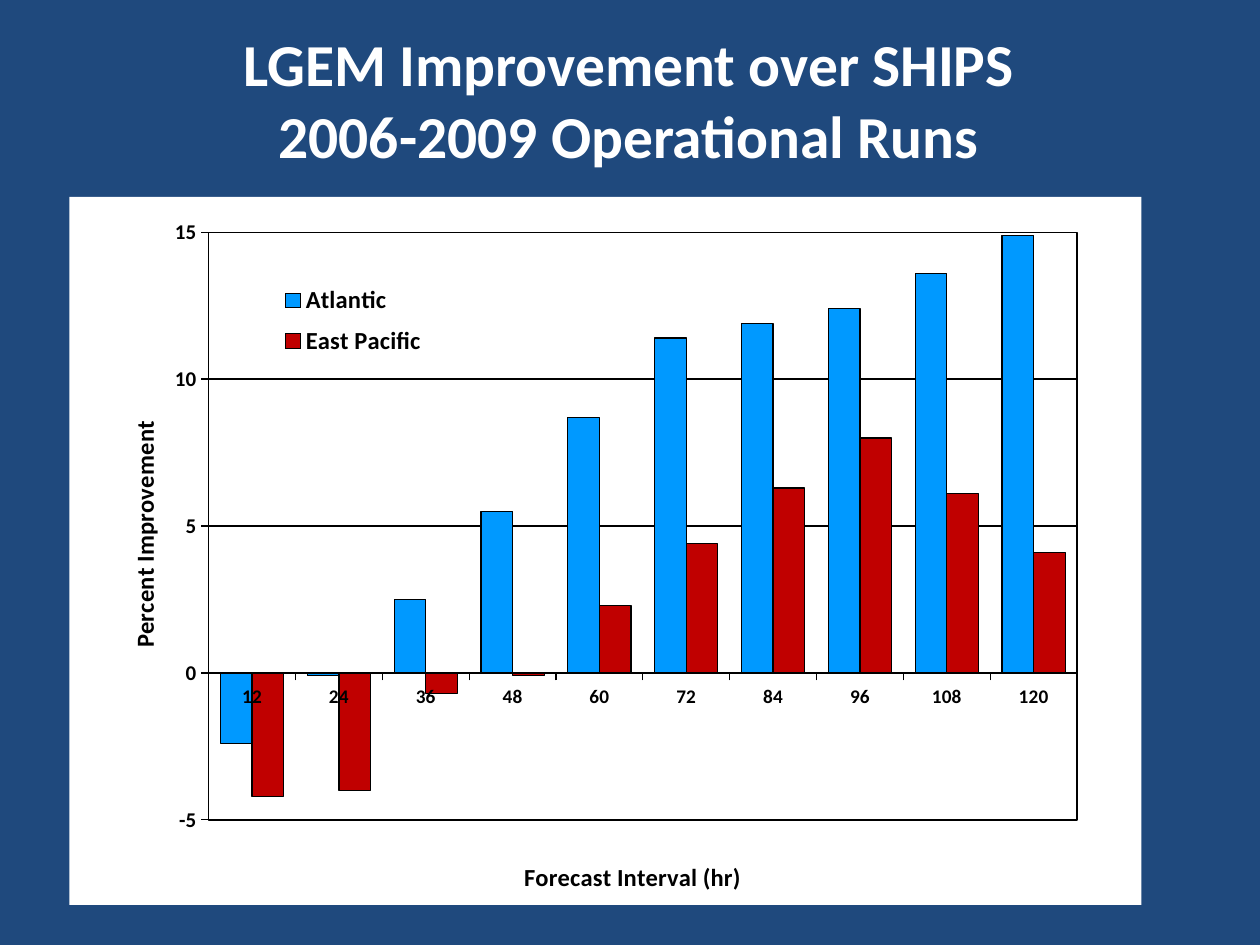
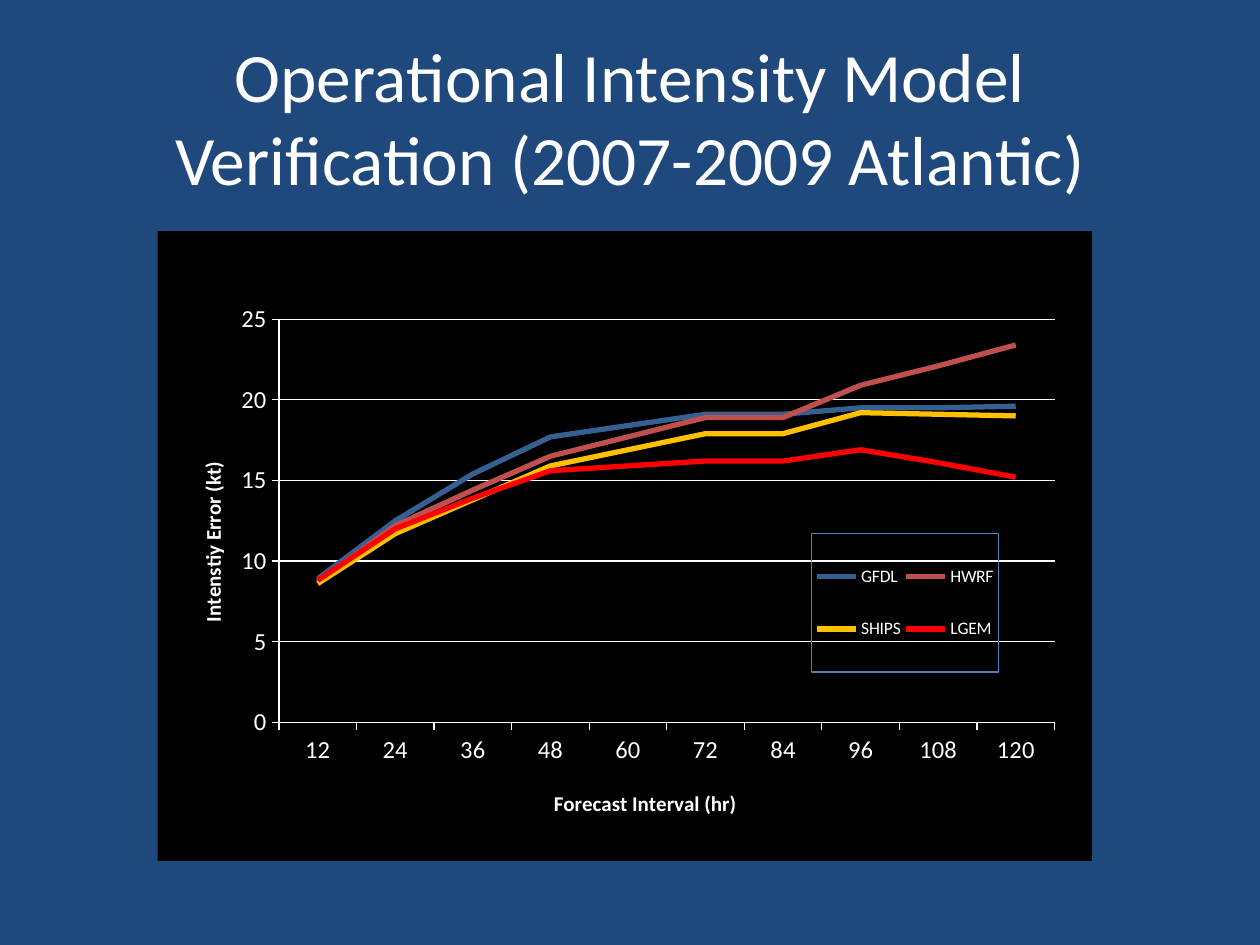
from lxml import etree
from pptx import Presentation
from pptx.chart.data import CategoryChartData
from pptx.dml.color import RGBColor
from pptx.enum.chart import XL_CHART_TYPE, XL_LEGEND_POSITION, XL_TICK_MARK
from pptx.enum.text import MSO_ANCHOR, MSO_AUTO_SIZE, PP_ALIGN
from pptx.oxml import parse_xml
from pptx.oxml.ns import qn
from pptx.util import Pt

BARS = XL_CHART_TYPE.COLUMN_CLUSTERED
LINES = XL_CHART_TYPE.LINE
RIGHT = XL_LEGEND_POSITION.RIGHT
OUT = XL_TICK_MARK.OUTSIDE
NONE = XL_TICK_MARK.NONE
MIDDLE = MSO_ANCHOR.MIDDLE
FIXED = MSO_AUTO_SIZE.NONE
CENTER = PP_ALIGN.CENTER

FONT = "Calibri"
HUES = {
    "navy": "1F497D", "white": "FFFFFF", "black": "000000",
    "sky": "0099FF", "brick": "C00000", "steel": "376092",
    "rose": "C0504D", "gold": "FFC000", "red": "FF0000", "edge": "4F81BD",
}
HOURS = [str(hour) for hour in range(12, 121, 12)]
DRAW = "http://schemas.openxmlformats.org/drawingml/2006/main"
CHART = "http://schemas.openxmlformats.org/drawingml/2006/chart"


class Deck:
    """Holds the shared style and the current slide."""

    def __init__(self):
        self.prs = Presentation()
        self.prs.slide_width, self.prs.slide_height = Pt(720), Pt(540)
        self.tint(self.prs.slide_master.background.fill, "navy")
        self.slide = None

    def tint(self, fill, hue):
        fill.solid()
        fill.fore_color.rgb = RGBColor.from_string(HUES[hue])

    def style(self, font, hue, size, bold=False):
        for key, value in {"name": FONT, "size": Pt(size), "bold": bold}.items():
            setattr(font, key, value)
        font.color.rgb = RGBColor.from_string(HUES[hue])

    def stroke(self, line, hue, width=0.75):
        self.tint(line.fill, hue)
        line.width = Pt(width)

    def title(self, lines, box, size, bold=False):
        self.slide = self.prs.slides.add_slide(self.prs.slide_layouts[5])
        shape = self.slide.shapes.title
        for key, value in zip(("left", "top", "width", "height"), box):
            setattr(shape, key, Pt(value))
        frame = shape.text_frame
        form = {"word_wrap": True, "auto_size": FIXED, "vertical_anchor": MIDDLE}
        for key, value in form.items():
            setattr(frame, key, value)
        para = frame.paragraphs[0]
        para.alignment = CENTER
        for row, text in enumerate(lines):
            if row:
                para.add_line_break()
            run = para.add_run()
            run.text = text
            self.style(run.font, "white", size, bold)

    def place(self, node, index, spot, inner=False):
        for old in node.findall(qn("c:layout")):
            node.remove(old)
        layout = parse_xml(f'<c:layout xmlns:c="{CHART}"><c:manualLayout/></c:layout>')
        marks = [("layoutTarget", "inner")] if inner else []
        marks += [("xMode", "edge"), ("yMode", "edge"), *zip("xywh", spot)]
        for tag, value in marks:
            etree.SubElement(layout[0], qn(f"c:{tag}")).set("val", str(value))
        node.insert(index, layout)

    def skin(self, prior, fill=None, edge=None):
        def solid(hue):
            if not hue:
                return "<a:noFill/>"
            return f'<a:solidFill><a:srgbClr val="{HUES[hue]}"/></a:solidFill>'

        prior.addnext(parse_xml(
            f'<c:spPr xmlns:c="{CHART}" xmlns:a="{DRAW}">{solid(fill)}'
            f'<a:ln w="{Pt(0.75)}">{solid(edge)}</a:ln></c:spPr>'))

    def axis(self, axis, text, spot, ink, size, head, bold):
        form = {"major_tick_mark": OUT, "minor_tick_mark": NONE}
        for key, value in form.items():
            setattr(axis, key, value)
        self.style(axis.tick_labels.font, ink, size, bold)
        self.stroke(axis.format.line, ink)
        name = axis.axis_title
        run = name.text_frame.paragraphs[0].add_run()
        run.text = text
        self.style(run.font, ink, head, True)
        self.place(name._element, 1, spot)

    def scale(self, axis, low, high, ink):
        form = {"minimum_scale": low, "maximum_scale": high, "major_unit": 5,
                "has_major_gridlines": True}
        for key, value in form.items():
            setattr(axis, key, value)
        self.stroke(axis.major_gridlines.format.line, ink)
        axis.tick_labels.number_format = "0"
        axis.tick_labels.number_format_is_linked = False

    def legend(self, chart, spot, ink, size, bold, edge):
        chart.has_legend = True
        legend = chart.legend
        legend.position = RIGHT
        legend.include_in_layout = False
        self.style(legend.font, ink, size, bold)
        node = legend._element
        self.place(node, 1, spot)
        self.skin(node.find(qn("c:overlay")), edge=edge)

    def chart(self, kind, box, rows, ground, area, edge=None):
        data = CategoryChartData(number_format="0.0")
        data.categories = HOURS
        for name, hue, values in rows:
            data.add_series(name, values)
        frame = self.slide.shapes.add_chart(kind, *map(Pt, box), data)
        chart = frame.chart
        chart.has_title = False
        self.style(chart.font, "white", 10)
        root = chart._chartSpace.find(qn("c:chart"))
        self.skin(root, ground)
        field = root.find(qn("c:plotArea"))
        self.place(field, 0, area, True)
        self.skin(field[-1], ground, edge)
        plot = chart.plots[0]
        plot.vary_by_categories = False
        for series, (name, hue, values) in zip(plot.series, rows):
            if kind == BARS:
                series.invert_if_negative = False
                self.tint(series.format.fill, hue)
                self.stroke(series.format.line, "black")
            else:
                series.smooth = False
                self.stroke(series.format.line, hue, 3)
        return chart


def gains(deck):
    deck.title(["LGEM Improvement over SHIPS", "2006-2009 Operational Runs"],
               (17.28, 11.52, 684, 90), 34, True)
    rows = [
        ("Atlantic", "sky",
         [-2.4, -0.1, 2.5, 5.5, 8.7, 11.4, 11.9, 12.4, 13.6, 14.9]),
        ("East Pacific", "brick",
         [-4.2, -4, -0.7, -0.1, 2.3, 4.4, 6.3, 8, 6.1, 4.1]),
    ]
    chart = deck.chart(BARS, (39.6, 112.5, 612.7, 404.6), rows, "white",
                       (0.13, 0.05, 0.81, 0.83), "black")
    chart.plots[0].gap_width = 75
    chart.plots[0].overlap = 0
    deck.axis(chart.category_axis, "Forecast Interval (hr)", (0.42, 0.93),
              "black", 11, 14, True)
    deck.axis(chart.value_axis, "Percent Improvement", (0.05, 0.31),
              "black", 12, 14, True)
    deck.scale(chart.value_axis, -5, 15, "black")
    deck.legend(chart, (0.19, 0.11, 0.15, 0.13), "black", 14, True, None)


def errors(deck):
    deck.title(["Operational Intensity Model Verification (2007-2009 Atlantic)"],
               (36, 21.6, 648, 90), 39.6)
    rows = [
        ("GFDL", "steel",
         [8.9, 12.5, 15.4, 17.7, 18.4, 19.1, 19.1, 19.5, 19.5, 19.6]),
        ("HWRF", "rose",
         [8.7, 12.2, 14.4, 16.5, 17.7, 18.9, 18.9, 20.9, 22.1, 23.4]),
        ("SHIPS", "gold",
         [8.6, 11.7, 13.8, 15.9, 16.9, 17.9, 17.9, 19.2, 19.1, 19]),
        ("LGEM", "red",
         [8.8, 12, 13.9, 15.6, 15.9, 16.2, 16.2, 16.9, 16.1, 15.2]),
    ]
    chart = deck.chart(LINES, (90, 132, 534, 360), rows, "black",
                       (0.13, 0.14, 0.83, 0.64))
    deck.axis(chart.category_axis, "Forecast Interval (hr)", (0.42, 0.88),
              "white", 14, 12, False)
    deck.axis(chart.value_axis, "Intenstiy Error (kt)", (0.04, 0.36),
              "white", 14, 12, False)
    deck.scale(chart.value_axis, 0, 25, "white")
    deck.legend(chart, (0.7, 0.48, 0.2, 0.22), "white", 10, False, "edge")


def main():
    deck = Deck()
    gains(deck)
    errors(deck)
    deck.prs.save("out.pptx")


if __name__ == "__main__":
    main()
